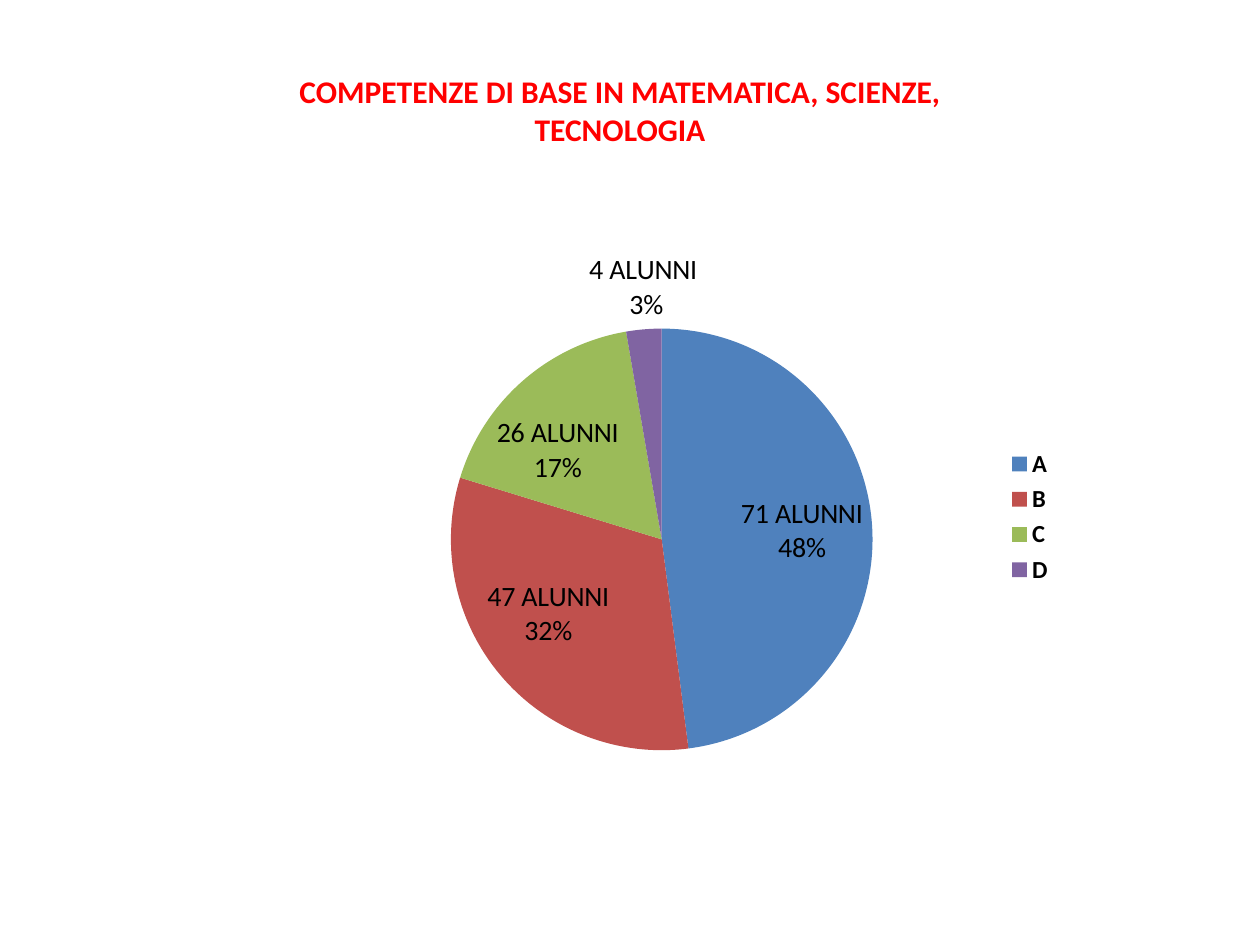
from lxml import etree
from pptx import Presentation
from pptx.chart.data import CategoryChartData
from pptx.dml.color import RGBColor as RGB
from pptx.enum.chart import XL_CHART_TYPE as ChartType
from pptx.enum.chart import XL_LABEL_POSITION as LabelPos
from pptx.enum.chart import XL_LEGEND_POSITION as LegendPos
from pptx.enum.text import PP_ALIGN as Align
from pptx.oxml.ns import qn
from pptx.util import Cm, Pt

TITLE = "COMPETENZE DI BASE IN MATEMATICA, SCIENZE, TECNOLOGIA"
FONT = "Calibri"
COLORS = {"title": "FF0000", "text": "000000", "A": "4F81BD",
          "B": "C0504D", "C": "9BBB59", "D": "8064A2"}
LEVELS = [
    ("A", 71, ["71 ALUNNI 48%"]),
    ("B", 47, ["47 ALUNNI 32%"]),
    ("C", 26, ["26 ALUNNI 17%"]),
    ("D", 4, ["4 ALUNNI", " 3%"]),
]
PIE_LAYOUT = {"layoutTarget": "inner", "xMode": "edge", "yMode": "edge",
              "x": 0.27, "y": 0.16, "w": 0.5, "h": 0.76}


def style(font, size, color, bold=False):
    font.name = FONT
    font.size = Pt(size)
    font.bold = bold
    font.color.rgb = RGB.from_string(COLORS[color])


def add_title(s):
    tf = s.shapes.add_textbox(Cm(5.5), Cm(1.33), Cm(14), Cm(1.8)).text_frame
    tf.word_wrap = True
    p = tf.paragraphs[0]
    p.alignment = Align.CENTER
    r = p.add_run()
    r.text = TITLE
    style(r.font, 18, "title", True)


def place_plot(chart):
    area = chart.element.find(".//" + qn("c:plotArea"))
    for old in area.findall(qn("c:layout")):
        area.remove(old)
    layout = etree.Element(qn("c:layout"))
    manual = etree.SubElement(layout, qn("c:manualLayout"))
    for name, value in PIE_LAYOUT.items():
        etree.SubElement(manual, qn("c:" + name)).set("val", str(value))
    area.insert(0, layout)


def add_pie(s):
    data = CategoryChartData()
    data.categories = [level[0] for level in LEVELS]
    data.add_series("Series 1", [level[1] for level in LEVELS])
    chart = s.shapes.add_chart(ChartType.PIE, Cm(4.5), Cm(4.72),
                               Cm(17), Cm(11.4), data).chart
    style(chart.font, 10, "text")
    chart.has_title = False
    chart.has_legend = True
    chart.legend.position = LegendPos.RIGHT
    chart.legend.include_in_layout = False
    style(chart.legend.font, 14, "text", True)
    place_plot(chart)

    plot = chart.plots[0]
    plot.vary_by_categories = True
    series = plot.series[0]
    labels = series.data_labels
    labels.show_value = True
    labels.show_percentage = True
    labels.position = LabelPos.BEST_FIT
    style(labels.font, 16, "text", True)

    for i, (name, count, lines) in enumerate(LEVELS):
        point = series.points[i]
        point.format.fill.solid()
        point.format.fill.fore_color.rgb = RGB.from_string(COLORS[name])
        label = point.data_label
        tf = label.text_frame
        for j, line in enumerate(lines):
            p = tf.add_paragraph() if j else tf.paragraphs[0]
            r = p.add_run()
            r.text = line
            style(r.font, 16, "text")
        label.position = LabelPos.BEST_FIT


def main():
    prs = Presentation()
    prs.slide_width, prs.slide_height = Cm(25.4), Cm(19.05)
    s = prs.slides.add_slide(prs.slide_layouts[6])
    add_title(s)
    add_pie(s)
    prs.save("out.pptx")


if __name__ == "__main__":
    main()
